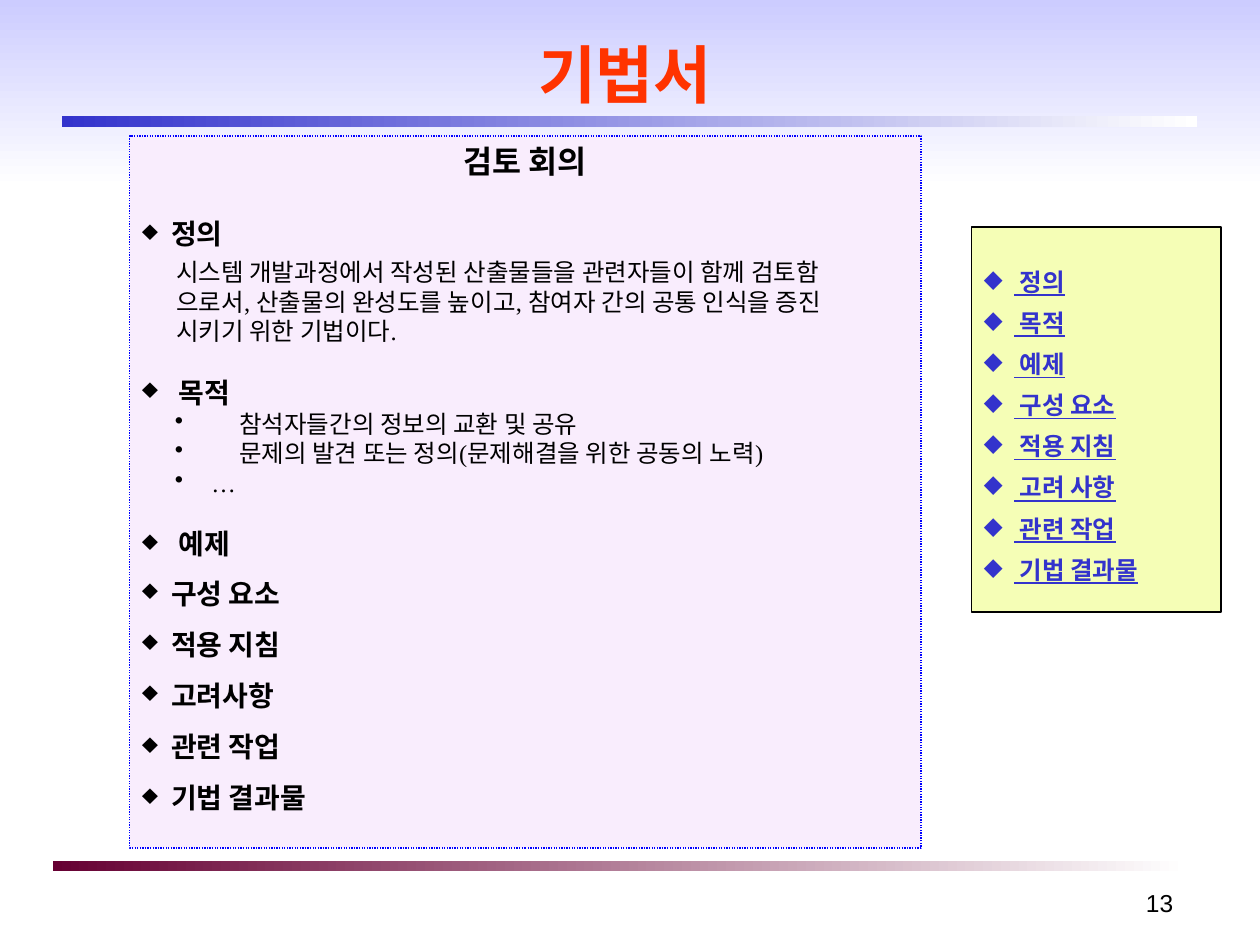
"""Build the technique guide slide about review meetings."""
import pptx
import pptx.dml.color
import pptx.enum.dml
import pptx.enum.shapes
import pptx.enum.text
import pptx.oxml.ns
import pptx.util
from lxml import etree

Inches = pptx.util.Inches
Pt = pptx.util.Pt
RGBColor = pptx.dml.color.RGBColor
ALIGN = pptx.enum.text.PP_ALIGN
ANCHOR = pptx.enum.text.MSO_ANCHOR

BLACK = RGBColor(0, 0, 0)
WHITE = RGBColor(255, 255, 255)
LAVENDER = RGBColor(0xCC, 0xCC, 0xFF)
MAROON = RGBColor(0x66, 0x00, 0x33)
INDIGO = RGBColor(0x33, 0x33, 0xCC)
BLUE = RGBColor(0, 0, 255)
ORANGE = RGBColor(0xFF, 0x33, 0x00)
PINK = RGBColor(0xF9, 0xED, 0xFD)
YELLOW = RGBColor(0xF5, 0xFE, 0xB6)

TITLE = "기법서"
PAGE_NUMBER = "13"
BANDS = [
    ((0, 0, 10, 1.5), LAVENDER, 270),
    ((0.42, 6.83, 9, 0.08), MAROON, 0),
    ((0.49, 0.92, 9.01, 0.09), INDIGO, 0),
]
STYLES = {
    "heading": dict(size=18, bold=True, align=ALIGN.CENTER),
    "section": dict(size=16, bold=True, bullet="♦", margin=0.23, hanging=0.23),
    "spaced section": dict(size=16, bold=True, bullet="♦", margin=0.29, hanging=0.29),
    "body": dict(size=14, margin=0.27),
    "item": dict(size=14, bullet="•", margin=0.77, hanging=0.51),
    "more": dict(size=14, bullet="•", margin=0.55, hanging=0.29),
}
GUIDE = [
    ("heading", "검토 회의", 0),
    ("section", "정의", 21),
    ("body", "시스템 개발과정에서 작성된 산출물들을 관련자들이 함께 검토함", 4),
    ("body", "으로서, 산출물의 완성도를 높이고, 참여자 간의 공통 인식을 증진", 0),
    ("body", "시키기 위한 기법이다.", 0),
    ("spaced section", "목적", 17),
    ("item", "참석자들간의 정보의 교환 및 공유", 0),
    ("item", "문제의 발견 또는 정의(문제해결을 위한 공동의 노력)", 0),
    ("more", "…", 0),
    ("spaced section", "예제", 17),
    ("section", "구성 요소", 9),
    ("section", "적용 지침", 10),
    ("section", "고려사항", 10),
    ("section", "관련 작업", 10),
    ("section", "기법 결과물", 10),
]
CONTENTS = ["정의", "목적", "예제", "구성 요소", "적용 지침", "고려 사항", "관련 작업", "기법 결과물"]


def place(shape, box):
    shape.left, shape.top, shape.width, shape.height = map(Inches, box)


def add_rectangle(slide, box):
    shape = slide.shapes.add_shape(
        pptx.enum.shapes.MSO_SHAPE.RECTANGLE, *map(Inches, box))
    shape.shadow.inherit = False
    return shape


def add_panel(slide, box, fill, line, width, anchor):
    shape = add_rectangle(slide, box)
    shape.fill.solid()
    shape.fill.fore_color.rgb = fill
    shape.line.color.rgb = line
    shape.line.width = Pt(width)
    shape.text_frame.word_wrap = True
    shape.text_frame.vertical_anchor = anchor
    return shape


def add_band(slide, box, color, angle):
    shape = add_rectangle(slide, box)
    shape.line.fill.background()
    shape.fill.gradient()
    shape.fill.gradient_angle = angle
    for stop, stop_color in zip(shape.fill.gradient_stops, (color, WHITE)):
        stop.color.rgb = stop_color


def write(paragraph, text, size, color, font="Arial", bold=False,
          align=ALIGN.LEFT, bullet=None, margin=0, hanging=0):
    paragraph.text = text
    paragraph.alignment = align
    properties = paragraph._p.get_or_add_pPr()
    properties.set("marL", str(Inches(margin)))
    properties.set("indent", str(-Inches(hanging)))
    if bullet:
        etree.SubElement(properties, pptx.oxml.ns.qn("a:buChar"), char=bullet)
    paragraph.font.size = Pt(size)
    paragraph.font.name = font
    paragraph.font.bold = bold
    paragraph.font.color.rgb = color


def paragraphs_for(frame, entries):
    for index, entry in enumerate(entries):
        yield (frame.add_paragraph() if index else frame.paragraphs[0]), entry


def main():
    presentation = pptx.Presentation()
    presentation.slide_width = Inches(10)
    presentation.slide_height = Inches(7.5)
    slide = presentation.slides.add_slide(presentation.slide_layouts[5])

    for band in BANDS:
        add_band(slide, *band)

    title = slide.shapes.title
    title.element.getparent().append(title.element)
    place(title, (0.5, 0.33, 8.92, 0.5))
    title.text_frame.vertical_anchor = ANCHOR.MIDDLE
    write(title.text_frame.paragraphs[0], TITLE, 36, ORANGE, bold=True, align=ALIGN.CENTER)

    number = slide.shapes.add_textbox(*map(Inches, (7.33, 7, 2.08, 0.5)))
    number.text_frame.word_wrap = True
    write(number.text_frame.paragraphs[0], PAGE_NUMBER, 14, BLACK, align=ALIGN.RIGHT)

    guide = add_panel(slide, (1.03, 1.08, 6.28, 5.65), PINK, BLUE, 0.75, ANCHOR.TOP)
    guide.line.dash_style = pptx.enum.dml.MSO_LINE.ROUND_DOT
    for paragraph, (style, text, gap) in paragraphs_for(guide.text_frame, GUIDE):
        write(paragraph, text, color=BLACK, font="Times New Roman", **STYLES[style])
        paragraph.line_spacing = Pt(STYLES[style]["size"] * 1.2)
        if gap:
            paragraph.space_before = Pt(gap)

    contents = add_panel(slide, (7.71, 1.8, 1.98, 3.06), YELLOW, BLACK, 1, ANCHOR.MIDDLE)
    for paragraph, text in paragraphs_for(contents.text_frame, CONTENTS):
        write(paragraph, " " + text, 14, INDIGO, bold=True,
              bullet="◆", margin=0.24, hanging=0.24)
        paragraph.font.underline = True
        paragraph.line_spacing = 1.4

    presentation.save("out.pptx")


if __name__ == "__main__":
    main()
